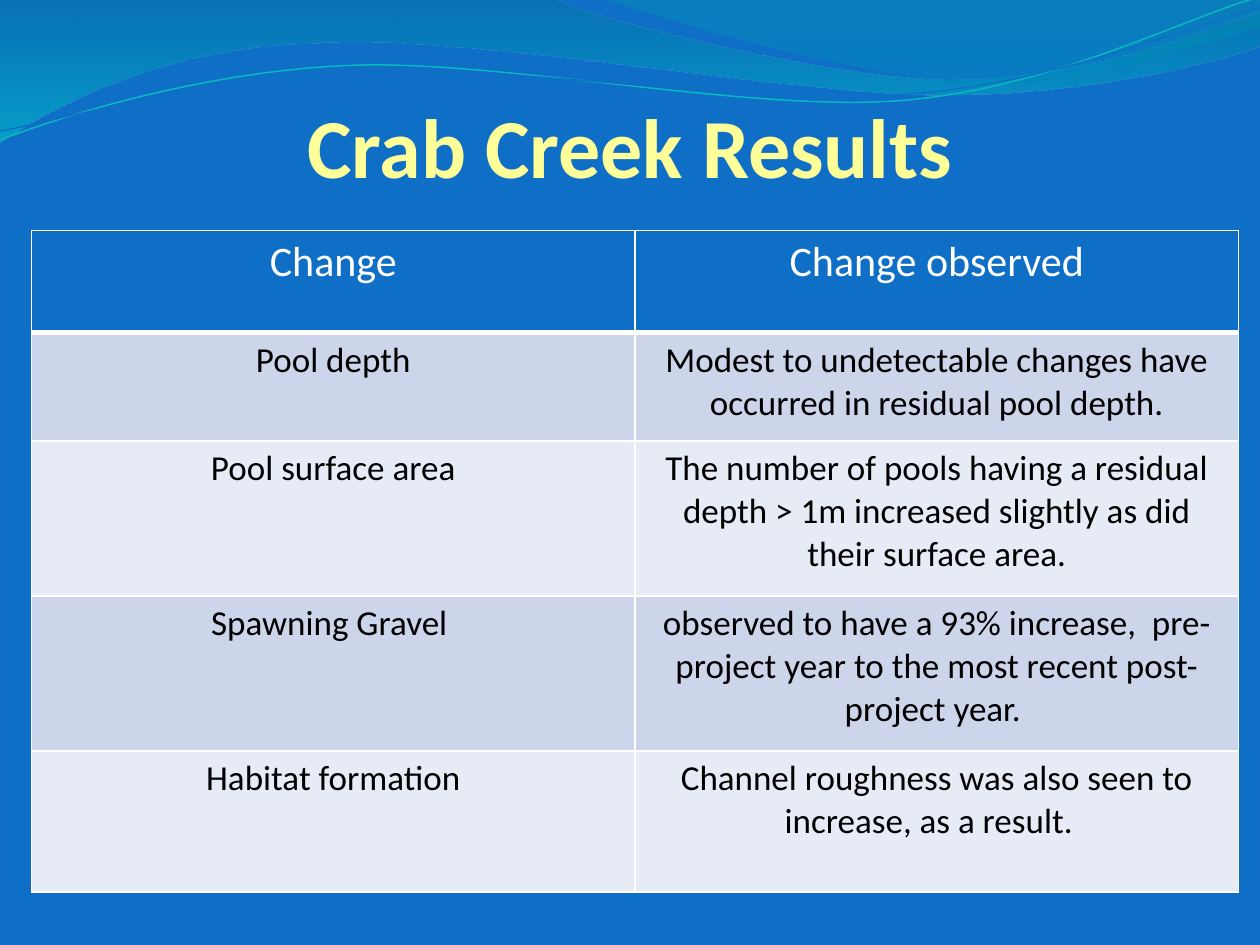
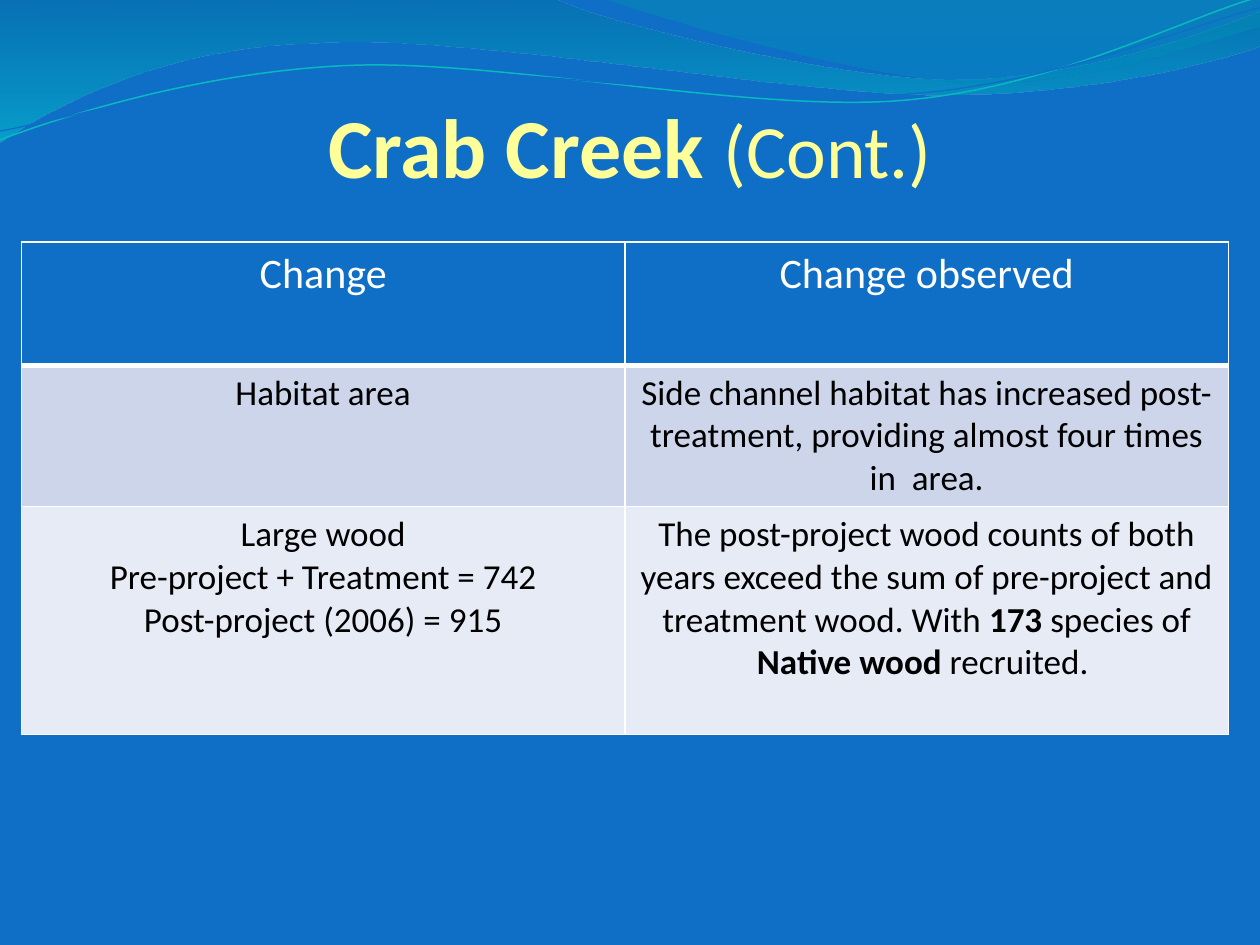
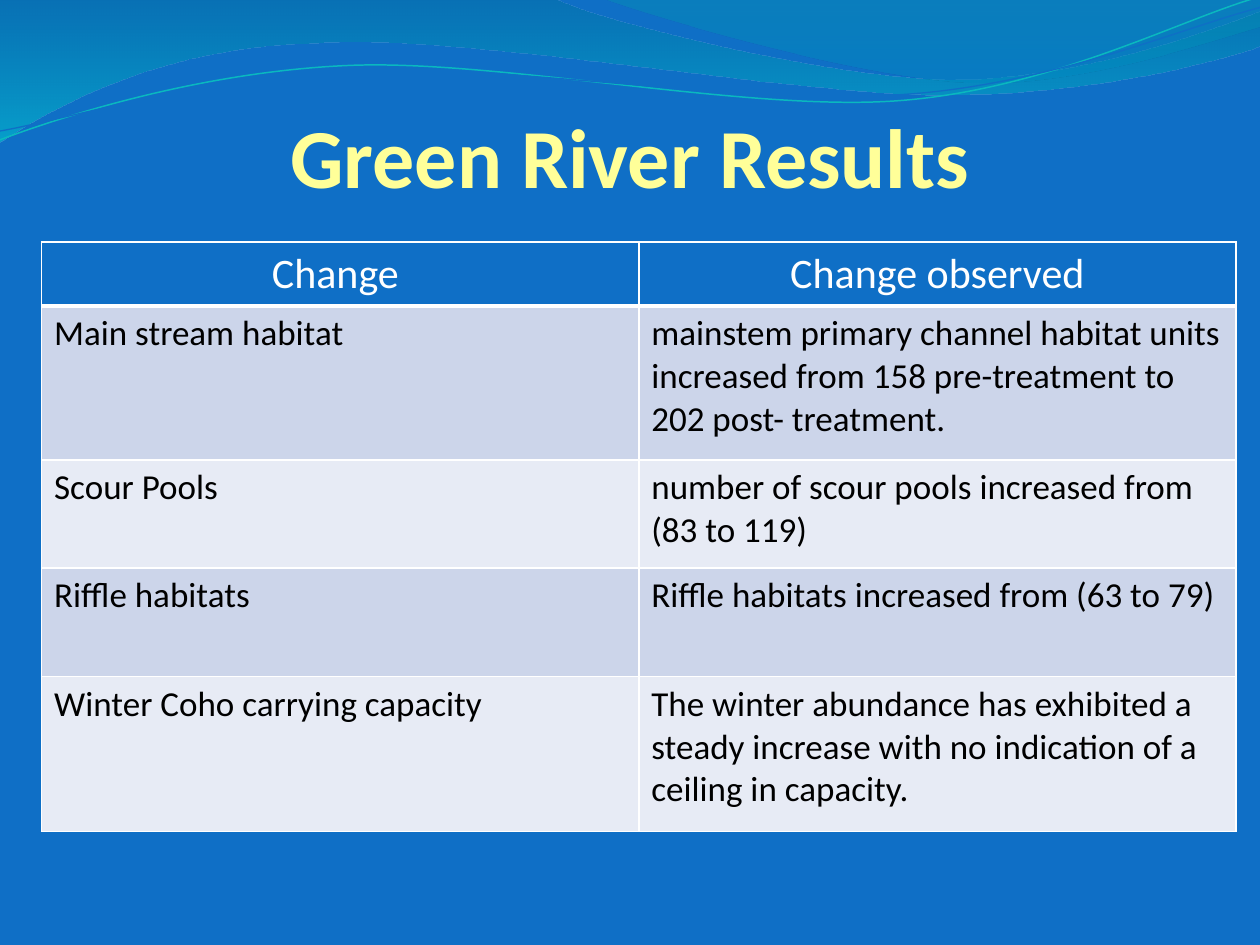
import lxml.etree
import pptx
import pptx.dml.color
import pptx.enum.text
import pptx.oxml.ns
import pptx.util

Inches = pptx.util.Inches
Pt = pptx.util.Pt
RGBColor = pptx.dml.color.RGBColor
Align = pptx.enum.text.PP_ALIGN
qn = pptx.oxml.ns.qn

BLUE = RGBColor(0x0F, 0x6F, 0xC6)
YELLOW = RGBColor(0xFF, 0xFF, 0x99)
WHITE = RGBColor(0xFF, 0xFF, 0xFF)
BLACK = RGBColor(0x00, 0x00, 0x00)
BAND_DARK = RGBColor(0xCC, 0xD5, 0xEA)
BAND_LIGHT = RGBColor(0xE7, 0xEB, 0xF5)
TEAL = RGBColor(0x0A, 0xB8, 0xBF)
DEEP_BLUE = RGBColor(0x00, 0x74, 0xA1)
AQUA = RGBColor(0x00, 0xC6, 0xCF)
SEA_GREEN = RGBColor(0x00, 0xA1, 0xA9)
SKY_BLUE = RGBColor(0x00, 0x8B, 0xBF)

FONT = "Calibri"
HEADER = ("Change", "Change observed")
HEADER_BORDERS = {"lnL": 1, "lnR": 1, "lnT": 1, "lnB": 3}

LEFT_WAVE = [
    (0, 0), (4.4, -0.01),
    (4.76, 0.17, 6.64, 0.63, 7.58, 0.63), (8.53, 0.63, 9.58, 0.26, 10, 0.09),
    (10.01, 0.36),
    (9.83, 0.44, 8.7, 0.76, 7.46, 0.75), (6.22, 0.75, 3.82, 0.28, 2.57, 0.34),
    (1.29, 0.36, 0.46, 0.83, -0.01, 1.13), (0, 0),
]
RIGHT_WAVE = [
    (4.79, -0.01),
    (5.09, 0.11, 6.82, 0.62, 7.69, 0.65), (8.56, 0.69, 9.61, 0.32, 10, 0.21),
    (10, 0), (4.79, -0.01),
]
TEAL_CREST = [
    (0, 1.11),
    (0.48, 0.93, 1.58, 0.57, 2.77, 0.52), (3.95, 0.47, 5.93, 0.89, 7.13, 0.8),
    (8.33, 0.71, 9.38, 0.15, 9.98, -0.02),
]
BLUE_CREST = [
    (0, 1.04),
    (0.47, 0.96, 1.64, 0.61, 2.83, 0.56), (4.03, 0.51, 5.97, 0.84, 7.17, 0.75),
    (8.36, 0.67, 9.41, 0.21, 10, 0.06),
]


class ResultsDeck:
    def __init__(self):
        self.deck = pptx.Presentation()
        self.deck.slide_width = Inches(10)
        self.deck.slide_height = Inches(7.5)
        self.layout = self.deck.slide_layouts[5]
        self.layout.background.fill.solid()
        self.layout.background.fill.fore_color.rgb = BLUE
        for placeholder in list(self.layout.placeholders)[1:]:
            placeholder.element.getparent().remove(placeholder.element)
        self.page = None

    def add_page(self):
        self.page = self.deck.slides.add_slide(self.layout)

    def outline(self, segments, close):
        points = [
            (Inches(segment[index]), Inches(segment[index + 1]))
            for segment in segments for index in range(0, len(segment), 2)
        ]
        builder = self.page.shapes.build_freeform(*points[0])
        builder.add_line_segments(points[1:], close=close)
        shape = builder.convert_to_shape()
        shape.shadow.inherit = False
        steps = iter(list(shape.element.iter(qn("a:lnTo"))))
        for segment in segments[1:]:
            first = next(steps)
            if len(segment) == 6:
                curve = lxml.etree.Element(qn("a:cubicBezTo"))
                first.addprevious(curve)
                for step in (first, next(steps), next(steps)):
                    curve.append(step[0])
                    step.getparent().remove(step)
        return shape

    def wave(self, segments, stops):
        shape = self.outline(segments, True)
        shape.line.fill.background()
        shape.fill.gradient()
        shape.fill.gradient_angle = 270
        for stop, (position, color, opacity) in zip(shape.fill.gradient_stops, stops):
            stop.position = position
            stop.color.rgb = color
        colors = shape.element.spPr.iter(qn("a:srgbClr"))
        for color, (position, rgb, opacity) in zip(colors, stops):
            lxml.etree.SubElement(color, qn("a:alpha")).set("val", str(opacity * 1000))
        return shape

    def crest(self, segments, color, width):
        shape = self.outline(segments, False)
        shape.fill.background()
        shape.line.color.rgb = color
        shape.line.width = Pt(width)
        return shape

    def move_to_layout(self, shapes):
        tree = self.layout.shapes.element
        for index, shape in enumerate(shapes, start=2):
            tree.insert(index, shape.element)

    def span(self, para, text, size, color, bold):
        span = para.add_run()
        span.text = text
        span.font.name = FONT
        span.font.size = Pt(size)
        span.font.bold = bold
        span.font.color.rgb = color

    def title(self, text, top=0.5, suffix=""):
        box = self.page.shapes.title
        box.left, box.top = Inches(0), Inches(top)
        box.width, box.height = Inches(10), Inches(1.25)
        frame = box.text_frame
        frame.word_wrap = True
        frame.auto_size = pptx.enum.text.MSO_AUTO_SIZE.NONE
        frame.vertical_anchor = pptx.enum.text.MSO_ANCHOR.MIDDLE
        frame.margin_left = frame.margin_right = frame.margin_bottom = 0
        frame.margin_top = Inches(0.05)
        para = frame.paragraphs[0]
        para.alignment = Align.CENTER
        self.span(para, text, 48, YELLOW, True)
        if suffix:
            self.span(para, suffix, 43, YELLOW, False)

    def header_borders(self, cell):
        properties = cell._tc.get_or_add_tcPr()
        for index, (side, width) in enumerate(HEADER_BORDERS.items()):
            line = lxml.etree.Element(qn("a:" + side), w=str(Pt(width)))
            fill = lxml.etree.SubElement(line, qn("a:solidFill"))
            lxml.etree.SubElement(fill, qn("a:srgbClr")).set("val", str(WHITE))
            properties.insert(index, line)

    def cell(self, cell, text, size, color, fill, alignment):
        cell.fill.solid()
        cell.fill.fore_color.rgb = fill
        frame = cell.text_frame
        for index, line in enumerate(text.split("\n")):
            para = frame.add_paragraph() if index else frame.paragraphs[0]
            para.alignment = alignment
            for part, words in enumerate(line.split("**")):
                if words:
                    self.span(para, words, size, color, part % 2 == 1)

    def table(self, left, top, width, heights, rows, header=HEADER, alignment=Align.CENTER):
        table = self.page.shapes.add_table(
            len(heights), len(header), Inches(left), Inches(top),
            Inches(width), Inches(sum(heights))).table
        for row, height in zip(table.rows, heights):
            row.height = Inches(height)
        for column, text in enumerate(header):
            cell = table.cell(0, column)
            self.cell(cell, text, 24, WHITE, BLUE, Align.CENTER)
            self.header_borders(cell)
        for number, row in enumerate(rows, start=1):
            band = BAND_DARK if number % 2 else BAND_LIGHT
            for column, text in enumerate(row):
                self.cell(table.cell(number, column), text, 20, BLACK, band, alignment)


def main():
    results = ResultsDeck()

    results.add_page()
    results.move_to_layout([
        results.wave(LEFT_WAVE, [(0, DEEP_BLUE, 45), (1, AQUA, 55)]),
        results.wave(RIGHT_WAVE, [(0, SEA_GREEN, 30), (0.8, SKY_BLUE, 45)]),
        results.crest(TEAL_CREST, TEAL, 0.85),
        results.crest(BLUE_CREST, BLUE, 0.75),
    ])
    results.title("Crab Creek Results")
    results.table(0.25, 1.83, 9.58, [0.81, 0.86, 1.23, 1.23, 1.12], [
        ("Pool depth",
         "Modest to undetectable changes have occurred in residual pool depth."),
        ("Pool surface area",
         "The number of pools having a residual depth > 1m increased slightly "
         "as did their surface area."),
        ("Spawning Gravel ",
         "observed to have a 93% increase,  pre-project year to the most recent "
         "post-project year. "),
        ("Habitat formation",
         "Channel roughness was also seen to increase, as a result.  "),
    ])

    results.add_page()
    results.title("Crab Creek ", suffix="(Cont.)")
    results.table(0.17, 1.92, 9.58, [0.98, 1.12, 1.81], [
        ("Habitat area",
         "Side channel habitat has increased post-treatment, providing almost "
         "four times in  area."),
        ("Large wood\nPre-project + Treatment = 742\nPost-project (2006) = 915",
         "The post-project wood counts of both years exceed the sum of "
         "pre-project and treatment wood. With **173** species of "
         "**Native wood** recruited. "),
    ])

    results.add_page()
    results.title("Green River Results", top=0.58)
    results.table(0.33, 1.92, 9.48, [0.51, 1.22, 0.86, 0.86, 1.23], [
        ("Main stream habitat",
         "mainstem primary channel habitat units increased from 158 "
         "pre-treatment to 202 post- treatment."),
        ("Scour Pools", "number of scour pools increased from (83 to 119)"),
        ("Riffle habitats", "Riffle habitats increased from (63 to 79)"),
        ("Winter Coho carrying capacity",
         "The winter abundance has exhibited a steady increase with no "
         "indication of a ceiling in capacity."),
    ], header=("Change ", "Change observed"), alignment=Align.LEFT)

    results.deck.save("out.pptx")


if __name__ == "__main__":
    main()
